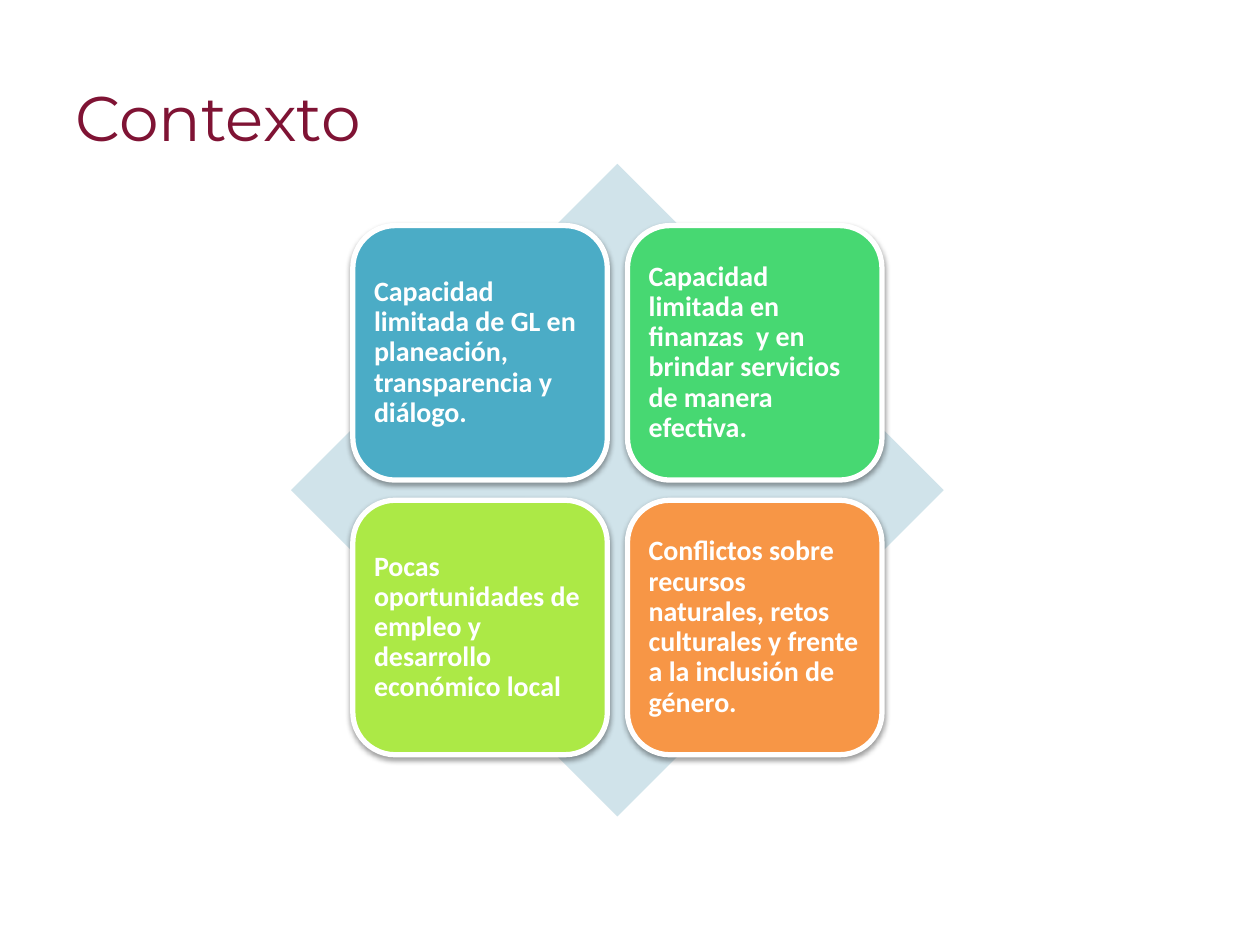
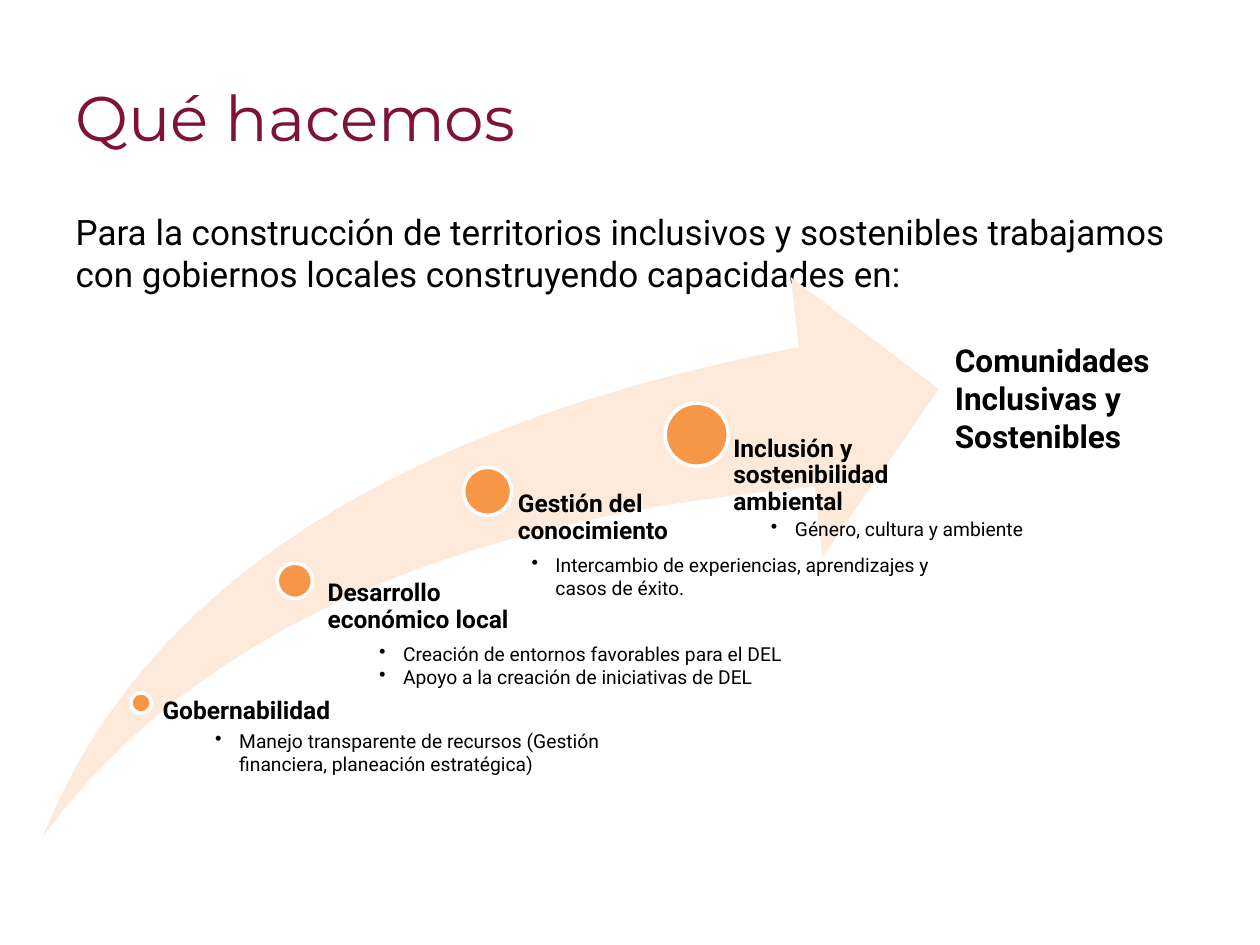
import pptx
import pptx.util
import pptx.dml.color
import pptx.enum.shapes
import pptx.enum.text
import pptx.oxml.ns
from lxml import etree

Inches = pptx.util.Inches
Pt = pptx.util.Pt
SHAPE = pptx.enum.shapes.MSO_SHAPE
ALIGN = pptx.enum.text.PP_ALIGN
ANCHOR = pptx.enum.text.MSO_ANCHOR
qn = pptx.oxml.ns.qn

COLORS = {
    "title": "7F1334", "text": "000000", "white": "FFFFFF",
    "diamond": "D0E3EA", "blue": "4BACC6", "green": "47D872",
    "lime": "ACE946", "orange": "F79646", "swoosh": "FDEADA",
}
FORMATS = {
    "title": dict(name="Montserrat", size=Pt(36), bold=False, color="title"),
    "card": dict(name="Calibri", size=Pt(16), bold=True, color="white"),
    "intro": dict(name="Roboto", size=Pt(20), bold=False, color="text"),
    "stage": dict(name="Roboto", size=Pt(14), bold=True, color="text"),
    "goal": dict(name="Roboto", size=Pt(18), bold=True, color="text"),
    "detail": dict(name="Roboto", size=Pt(11), bold=False, color="text"),
}

CONTEXT_TITLE = "Contexto"
CARDS = [
    ("blue", "Capacidad limitada de GL en planeación, transparencia y diálogo."),
    ("green", "Capacidad limitada en finanzas  y en brindar servicios de manera efectiva."),
    ("lime", "Pocas oportunidades de empleo y desarrollo económico local"),
    ("orange", "Conflictos sobre recursos naturales, retos culturales y frente "
               "a la inclusión de género."),
]

WORK_TITLE = "Qué hacemos"
INTRO = ("Para la construcción de territorios inclusivos y sostenibles trabajamos "
         "con gobiernos locales construyendo capacidades en:")
GOAL = "Comunidades Inclusivas y Sostenibles"
STAGES = [
    dict(name="Gobernabilidad", center=(1.12, 5.58), size=0.16,
         label=(1.2, 5.54, 1.92), inset=0.09, detail_at=(1.61, 5.74, 3.79, 0.66),
         details=["Manejo transparente de recursos (Gestión financiera, planeación estratégica)"]),
    dict(name="Desarrollo económico local", center=(2.34, 4.61), size=0.28,
         label=(2.45, 4.61, 1.73), inset=0.15, detail_at=(2.91, 5.05, 3.79, 0.66),
         details=["Creación de entornos favorables para el DEL",
                  "Apoyo a la creación de iniciativas de DEL"]),
    dict(name="Gestión del conocimiento", center=(3.87, 3.9), size=0.38,
         label=(3.91, 3.9, 1.82), inset=0.2, detail_at=(4.12, 4.34, 3.79, 0.66),
         details=["Intercambio de experiencias, aprendizajes y casos de éxito."]),
    dict(name="Inclusión y sostenibilidad ambiental", center=(5.53, 3.45), size=0.5,
         label=(5.55, 3.46, 1.65), inset=0.27, detail_at=(6.02, 4.06, 3.79, 0.47),
         details=["Género, cultura y ambiente"]),
]

SLIDE_SIZE = (10, 7.5)
TITLE_AT = (0.5, 0.3, 7.24, 1.25)
BODY_AT = (0.5, 1.62, 9, 4.95)
DIAMOND_AT = (2.31, 1.3, 5.18, 5.18)
CARD_LEFT, CARD_TOP, CARD_SIZE, CARD_PITCH = 2.8, 1.79, 2.02, 2.18
SWOOSH_AT = (0.34, 2.2, 7.11, 4.44)
GOAL_AT = (7.48, 2.66, 2.12, 1.01)


def rgb(name):
    return pptx.dml.color.RGBColor.from_string(COLORS[name])


def place(sp, at):
    for key, value in zip(("left", "top", "width", "height"), at):
        setattr(sp, key, Inches(value))


def write(sp, lines, style, insets=(0.1, 0.05, 0.1, 0.05), anchor=ANCHOR.TOP,
          spacing=1.0, bullet=False):
    tf = sp.text_frame
    tf.word_wrap = True
    tf.auto_size = pptx.enum.text.MSO_AUTO_SIZE.NONE
    tf.vertical_anchor = anchor
    for side, value in zip(("left", "top", "right", "bottom"), insets):
        setattr(tf, "margin_" + side, Inches(value))
    for i, line in enumerate(lines):
        p = tf.add_paragraph() if i else tf.paragraphs[0]
        indent = Inches(0.19) if bullet else 0
        pPr = p._p.get_or_add_pPr()
        pPr.set("marL", str(indent))
        pPr.set("indent", str(-indent))
        if bullet:
            etree.SubElement(pPr, qn("a:buChar")).set("char", "•")
        else:
            etree.SubElement(pPr, qn("a:buNone"))
        p.alignment = ALIGN.LEFT
        p.line_spacing = spacing
        p.space_before = Pt(0)
        r = p.add_run()
        r.text = line
        for key, value in FORMATS[style].items():
            if key == "color":
                r.font.color.rgb = rgb(value)
            else:
                setattr(r.font, key, value)


def add_shape(s, kind, at, fill, line_width=0):
    sp = s.shapes.add_shape(kind, *map(Inches, at))
    sp.shadow.inherit = False
    sp.fill.solid()
    sp.fill.fore_color.rgb = rgb(fill)
    if line_width:
        sp.line.color.rgb = rgb("white")
        sp.line.width = Pt(line_width)
    else:
        sp.line.fill.background()
    return sp


def add_text(s, at, lines, style, **options):
    sp = s.shapes.add_textbox(*map(Inches, at))
    write(sp, lines, style, **options)


def add_shadow(sp):
    effects = sp._element.spPr.find(qn("a:effectLst"))
    shadow = etree.SubElement(effects, qn("a:outerShdw"), blurRad=str(Pt(3.1)),
                              dist=str(Pt(1.6)), dir="5400000", rotWithShape="0")
    color = etree.SubElement(shadow, qn("a:srgbClr"), val=COLORS["text"])
    etree.SubElement(color, qn("a:alpha"), val="38000")


def add_slide(prs, layout, title):
    s = prs.slides.add_slide(prs.slide_layouts[layout])
    place(s.shapes.title, TITLE_AT)
    write(s.shapes.title, [title], "title", anchor=ANCHOR.MIDDLE)
    return s


def build_context(prs):
    s = add_slide(prs, 5, CONTEXT_TITLE)
    add_shape(s, SHAPE.DIAMOND, DIAMOND_AT, "diamond")
    for i, (color, text) in enumerate(CARDS):
        row, col = divmod(i, 2)
        at = (CARD_LEFT + col * CARD_PITCH, CARD_TOP + row * CARD_PITCH, CARD_SIZE, CARD_SIZE)
        sp = add_shape(s, SHAPE.ROUNDED_RECTANGLE, at, color, 3)
        add_shadow(sp)
        write(sp, [text], "card", insets=(0.07,) * 4, anchor=ANCHOR.MIDDLE, spacing=0.9)


def build_work(prs):
    s = add_slide(prs, 1, WORK_TITLE)
    body = s.placeholders[1]
    place(body, BODY_AT)
    write(body, [INTRO], "intro")
    swoosh = add_shape(s, SHAPE.SWOOSH_ARROW, SWOOSH_AT, "swoosh")
    for i in range(2):
        swoosh.adjustments[i] = 0.25
    bottom = SWOOSH_AT[1] + SWOOSH_AT[3]
    for stage in STAGES:
        (x, y), size = stage["center"], stage["size"]
        add_shape(s, SHAPE.OVAL, (x - size / 2, y - size / 2, size, size), "orange", 2)
        left, top, width = stage["label"]
        add_text(s, (left, top, width, bottom - top), [stage["name"]], "stage",
                 insets=(stage["inset"], 0, 0, 0), spacing=0.9)
        add_text(s, stage["detail_at"], stage["details"], "detail", bullet=True)
    add_text(s, GOAL_AT, [GOAL], "goal")


def main():
    prs = pptx.Presentation()
    prs.slide_width, prs.slide_height = map(Inches, SLIDE_SIZE)
    build_context(prs)
    build_work(prs)
    prs.save("out.pptx")


if __name__ == "__main__":
    main()
